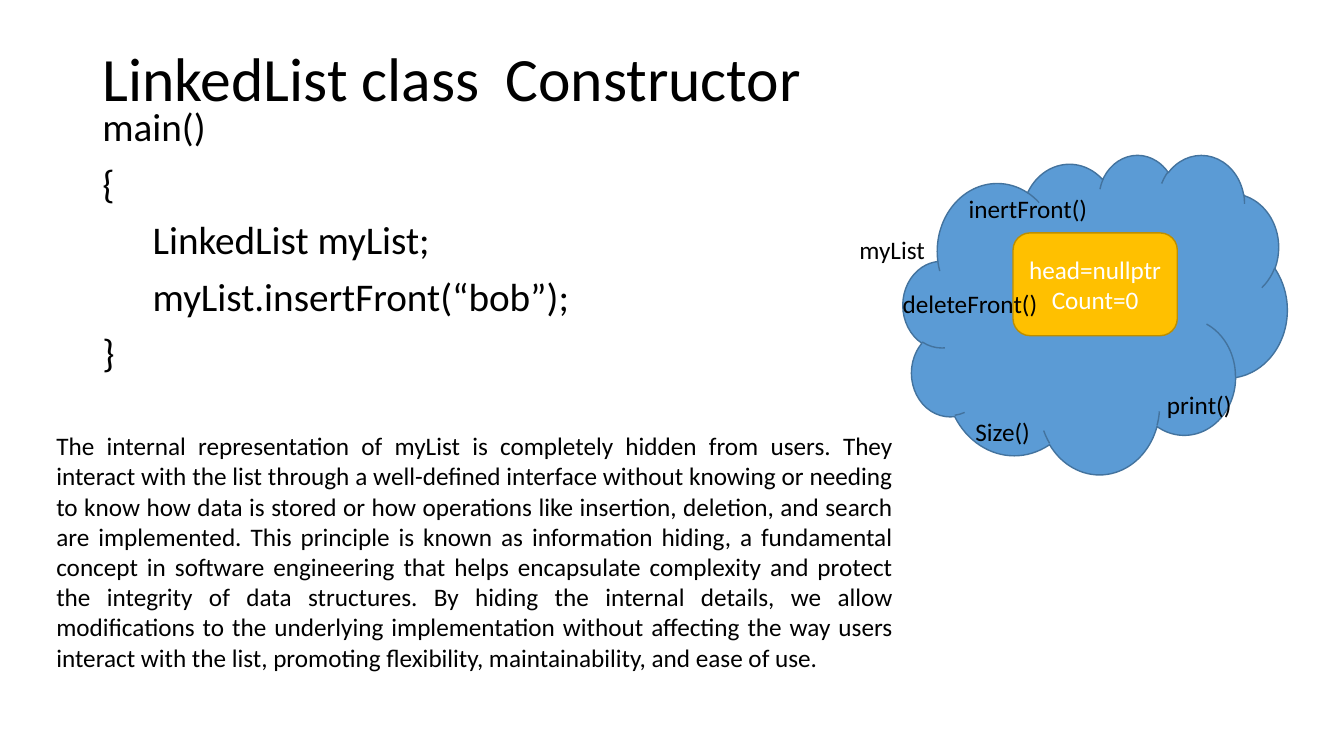
from pptx import Presentation
from pptx.dml.color import RGBColor
from pptx.enum.shapes import MSO_SHAPE
from pptx.enum.text import MSO_ANCHOR, MSO_AUTO_SIZE, PP_ALIGN
from pptx.util import Cm, Pt

CLOUD, ROUNDED = MSO_SHAPE.CLOUD, MSO_SHAPE.ROUNDED_RECTANGLE
TOP, MIDDLE = MSO_ANCHOR.TOP, MSO_ANCHOR.MIDDLE
LEFT, CENTER, JUSTIFY = PP_ALIGN.LEFT, PP_ALIGN.CENTER, PP_ALIGN.JUSTIFY
GROW, FIXED = MSO_AUTO_SIZE.SHAPE_TO_FIT_TEXT, MSO_AUTO_SIZE.NONE
BLACK = RGBColor(0x00, 0x00, 0x00)
WHITE = RGBColor(0xFF, 0xFF, 0xFF)
BLUE = RGBColor(0x5B, 0x9B, 0xD5)
DARK_BLUE = RGBColor(0x43, 0x73, 0x9E)
GOLD = RGBColor(0xFF, 0xC0, 0x00)
DARK_GOLD = RGBColor(0xBD, 0x8E, 0x00)
FONT = "Calibri"

TITLE = "LinkedList class\tConstructor"
CODE = [
    "main()",
    "{",
    "\tLinkedList myList;",
    "\tmyList.insertFront(“bob”);",
    "}",
]
FIELDS = ["head=nullptr", "Count=0"]
EXPLANATION = (
    "The internal representation of myList is completely hidden from users. "
    "They interact with the list through a well-defined interface without "
    "knowing or needing to know how data is stored or how operations like "
    "insertion, deletion, and search are implemented. This principle is known "
    "as information hiding, a fundamental concept in software engineering that "
    "helps encapsulate complexity and protect the integrity of data structures. "
    "By hiding the internal details, we allow modifications to the underlying "
    "implementation without affecting the way users interact with the list, "
    "promoting flexibility, maintainability, and ease of use."
)
LABELS = [
    ("myList", 21.41, 5.79, 2.18),
    ("inertFront()", 24.16, 4.75, 3.53),
    ("deleteFront()", 22.5, 7.14, 3.94),
    ("Size()", 24.33, 10.36, 1.9),
    ("print()", 29.16, 9.68, 2.16),
]
LABEL_H = 1.02


def write(shape, lines, size=18, color=BLACK, align=LEFT, anchor=TOP,
          spacing=None, before=0, wrap=True, auto_size=FIXED):
    tf = shape.text_frame
    tf.text = "\n".join(lines)
    tf.word_wrap = wrap
    tf.auto_size = auto_size
    tf.vertical_anchor = anchor
    for p in tf.paragraphs:
        p.alignment = align
        p.line_spacing = spacing
        p.space_before = Pt(before)
        for r in p.runs:
            r.font.name = FONT
            r.font.size = Pt(size)
            r.font.color.rgb = color


def add_text(s, box, lines, **style):
    write(s.shapes.add_textbox(*map(Cm, box)), lines, **style)


def add_filled(s, kind, box, fill, line):
    sp = s.shapes.add_shape(kind, *map(Cm, box))
    sp.shadow.inherit = False
    sp.fill.solid()
    sp.fill.fore_color.rgb = fill
    sp.line.color.rgb = line
    sp.line.width = Pt(1)
    return sp


def main():
    prs = Presentation()
    prs.slide_width, prs.slide_height = Cm(33.87), Cm(19.05)
    s = prs.slides.add_slide(prs.slide_layouts[6])

    add_text(s, (2.33, 1.01, 29.21, 2.11), [TITLE], size=44,
             anchor=MIDDLE, spacing=0.9)
    add_text(s, (2.33, 2.6, 29.21, 13.82), CODE, size=28,
             spacing=0.9, before=10)

    add_filled(s, CLOUD, (22.76, 3.89, 9.68, 8.05), BLUE, DARK_BLUE)
    data = add_filled(s, ROUNDED, (25.53, 5.87, 4.14, 2.59), GOLD, DARK_GOLD)
    write(data, FIELDS, color=WHITE, align=CENTER, anchor=MIDDLE)

    add_text(s, (1.17, 10.72, 21.59, 6.4), [EXPLANATION],
             align=JUSTIFY, auto_size=GROW)
    for label, x, y, w in LABELS:
        add_text(s, (x, y, w, LABEL_H), [label], wrap=False, auto_size=GROW)

    prs.save("out.pptx")


if __name__ == "__main__":
    main()
